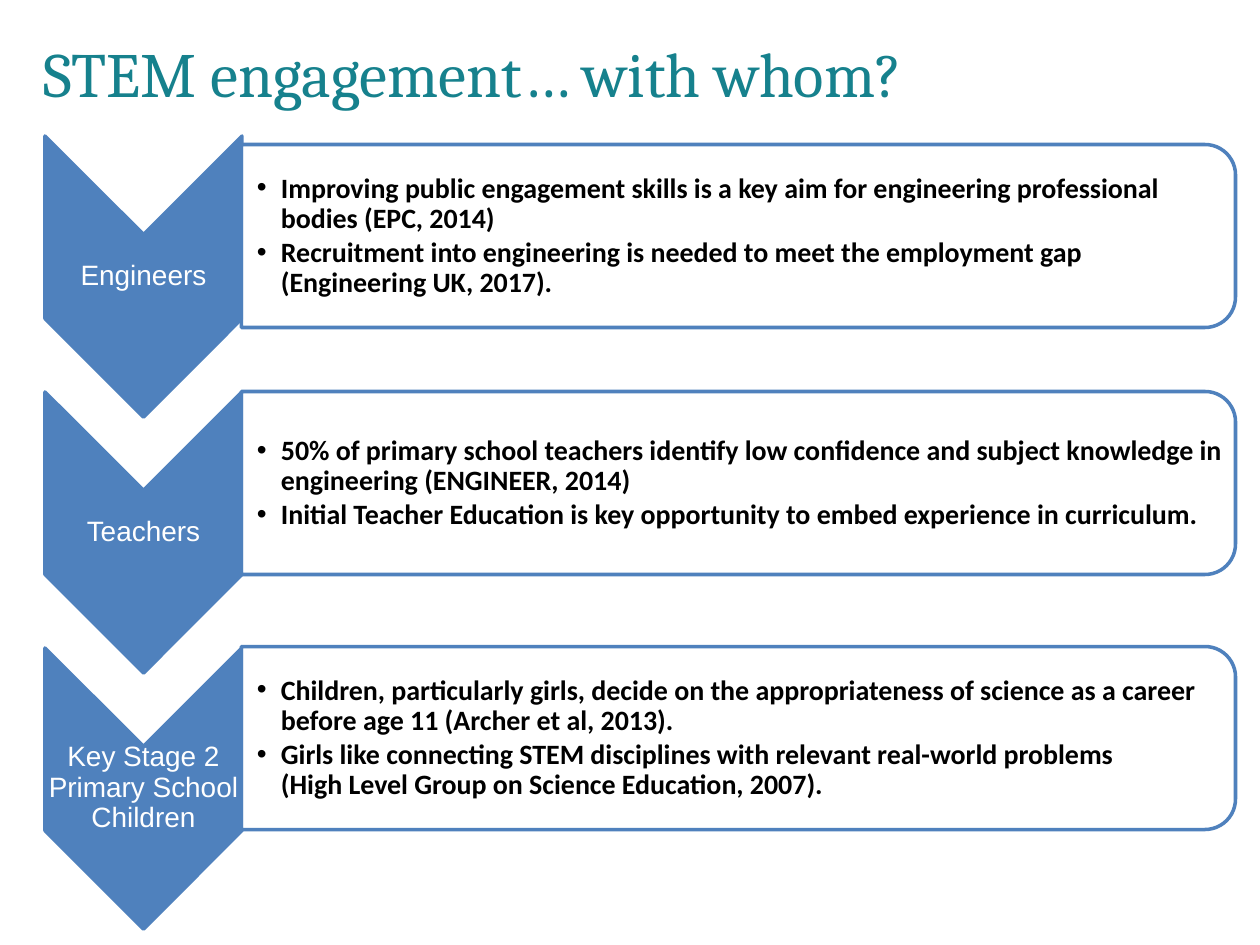
"""Build a slide of three chevron steps, each with a panel of bullet points."""
from dataclasses import dataclass
from typing import Any

from lxml.etree import SubElement
from pptx import Presentation
from pptx.dml.color import RGBColor
from pptx.enum.shapes import MSO_SHAPE
from pptx.enum.text import MSO_ANCHOR, PP_ALIGN
from pptx.oxml.ns import qn
from pptx.util import Emu, Pt

EMU_PER_PX = 914400 / 126
COLORS = {"blue": "4F81BD", "teal": "16818D", "white": "FFFFFF", "black": "000000"}
MIDDLE = {"word_wrap": True, "vertical_anchor": MSO_ANCHOR.MIDDLE}


def px(length: int) -> Emu:
    return Emu(round(length * EMU_PER_PX))


def color(name: str) -> RGBColor:
    return RGBColor.from_string(COLORS[name])


@dataclass(frozen=True)
class Box:
    left: int
    top: int
    width: int
    height: int

    @classmethod
    def centered(cls, x: int, y: int, width: int, height: int) -> "Box":
        return cls(x - width // 2, y - height // 2, width, height)

    def emu(self) -> list[Emu]:
        return [px(length) for length in (self.left, self.top, self.width, self.height)]


@dataclass(frozen=True)
class TextStyle:
    font: dict[str, Any]
    color: str
    frame: dict[str, Any]
    margins: tuple[int, int, int, int]
    paragraph: dict[str, Any]
    space_after_percent: int = 0
    bulleted: bool = False


@dataclass(frozen=True)
class Step:
    label: str
    points: tuple[str, ...]
    panel_center: int


TITLE = TextStyle({"name": "Cambria", "size": Pt(36)}, "teal", {"word_wrap": True},
                  (0, 0, 0, 0), {"line_spacing": Pt(42)})
LABEL = TextStyle({"name": "Arial", "size": Pt(16)}, "white", MIDDLE, (1, 1, 1, 1),
                  {"alignment": PP_ALIGN.CENTER, "line_spacing": 0.9}, 35)
POINTS = TextStyle({"name": "Calibri", "size": Pt(16), "bold": True}, "black", MIDDLE,
                   (15, 1, 1, 1), {"level": 1, "line_spacing": 0.9}, 15, True)

STEPS = (
    Step("Engineers", (
        "Improving public engagement skills is a key aim for engineering professional bodies (EPC, 2014)",
        "Recruitment into engineering is needed to meet the employment gap (Engineering UK, 2017).",
    ), 236),
    Step("Teachers", (
        "50% of primary school teachers identify low confidence and subject knowledge in engineering (ENGINEER, 2014)",
        "Initial Teacher Education is key opportunity to embed experience in curriculum.",
    ), 483),
    Step("Key Stage 2 Primary School Children", (
        "Children, particularly girls, decide on the appropriateness of science as a career before age 11 (Archer et al, 2013).",
        "Girls like connecting STEM disciplines with relevant real-world problems\v(High Level Group on Science Education, 2007).",
    ), 738),
)
CHEVRON_X, FIRST_CHEVRON_Y, CHEVRON_PITCH = 143, 276, 256
PANEL_X = 738


def apply(target: Any, values: dict[str, Any]) -> None:
    for name, value in values.items():
        setattr(target, name, value)


def add_text(slide: Any, box: Box, texts: tuple[str, ...], style: TextStyle) -> None:
    frame = slide.shapes.add_textbox(*box.emu()).text_frame
    sides = ("margin_left", "margin_top", "margin_right", "margin_bottom")
    apply(frame, style.frame | {side: px(margin) for side, margin in zip(sides, style.margins)})
    frame.text = "\n".join(texts)
    for paragraph in frame.paragraphs:
        apply(paragraph, style.paragraph)
        properties = paragraph._p.get_or_add_pPr()
        if style.space_after_percent:
            spacing = SubElement(properties, qn("a:spcAft"))
            SubElement(spacing, qn("a:spcPct"), val=str(style.space_after_percent * 1000))
        if style.bulleted:
            properties.set("marL", str(px(24)))
            properties.set("indent", str(-px(24)))
            SubElement(properties, qn("a:buFont"), typeface="Arial")
            SubElement(properties, qn("a:buChar"), char="•")
        for run in paragraph.runs:
            apply(run.font, style.font)
            run.font.color.rgb = color(style.color)


def add_turned_shape(slide: Any, kind: MSO_SHAPE, box: Box, fill: str, opacity: int = 100) -> None:
    shape = slide.shapes.add_shape(kind, *box.emu())
    shape.rotation = 90
    shape.shadow.inherit = False
    shape.fill.solid()
    shape.fill.fore_color.rgb = color(fill)
    shape.line.color.rgb = color("blue")
    shape.line.width = Pt(2)
    if opacity < 100:
        fill_color = shape._element.spPr.find(qn("a:solidFill")).find(qn("a:srgbClr"))
        SubElement(fill_color, qn("a:alpha"), val=str(opacity * 1000))


def add_step(slide: Any, step: Step, chevron_y: int) -> None:
    add_turned_shape(slide, MSO_SHAPE.CHEVRON,
                     Box.centered(CHEVRON_X, chevron_y, 281, 197), "blue")
    add_text(slide, Box.centered(CHEVRON_X, chevron_y, 197, 84), (step.label,), LABEL)
    add_turned_shape(slide, MSO_SHAPE.ROUND_2_SAME_RECTANGLE,
                     Box.centered(PANEL_X, step.panel_center, 183, 994), "white", 90)
    add_text(slide, Box.centered(PANEL_X - 4, step.panel_center, 985, 165), step.points, POINTS)


def main() -> None:
    presentation = Presentation()
    apply(presentation, {"slide_width": px(1260), "slide_height": px(945)})
    slide = presentation.slides.add_slide(presentation.slide_layouts[6])
    for index, step in enumerate(STEPS):
        add_step(slide, step, FIRST_CHEVRON_Y + index * CHEVRON_PITCH)
    add_text(slide, Box(44, 37, 1032, 89), ("STEM engagement… with whom?",), TITLE)
    presentation.save("out.pptx")


if __name__ == "__main__":
    main()
